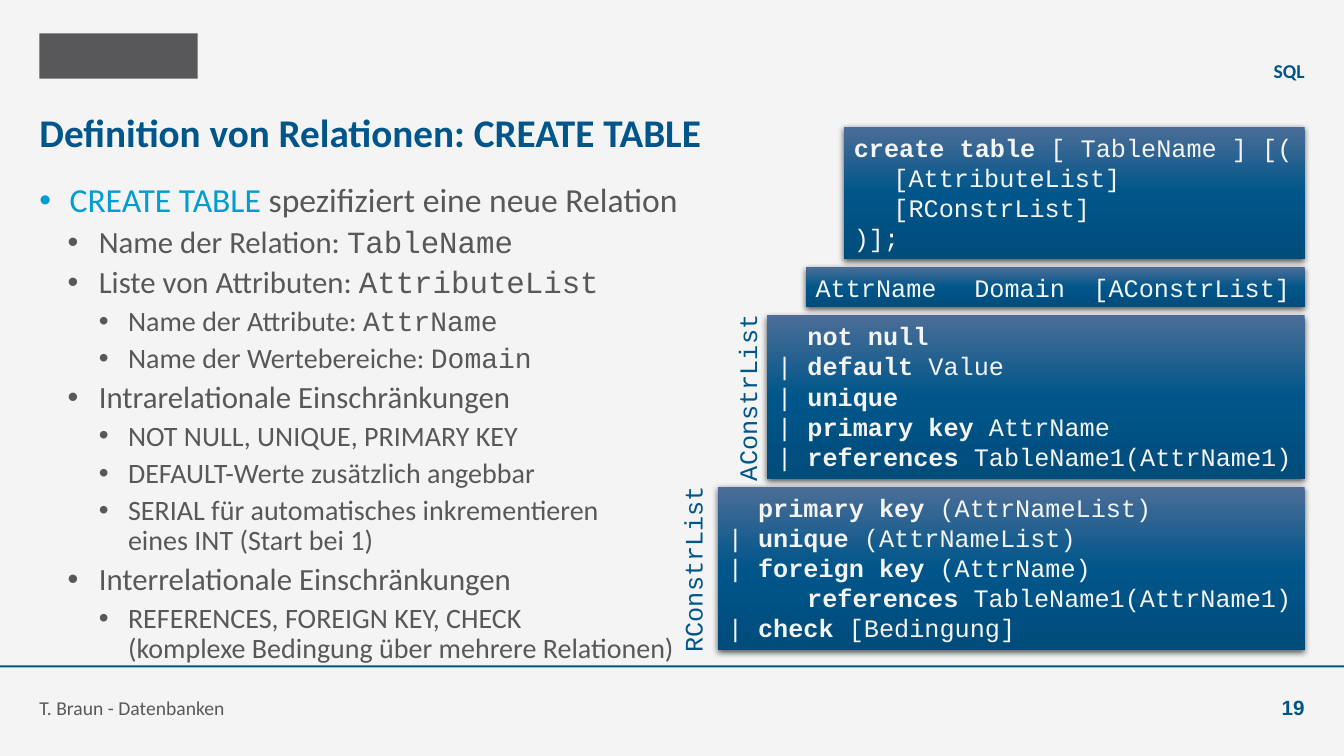
from lxml.etree import SubElement
from pptx import Presentation
from pptx.dml.color import RGBColor
from pptx.enum.shapes import MSO_SHAPE as Preset
from pptx.enum.text import MSO_ANCHOR as Anchor, MSO_AUTO_SIZE as AutoSize, PP_ALIGN as Align
from pptx.oxml.ns import qn
from pptx.util import Inches, Pt

COLORS = {
    "background": "F4F4F4",
    "blue": "00568A",
    "gray": "58585A",
    "accent": "009DD1",
    "light_blue": "4B6D97",
    "dark_blue": "004C7B",
    "black": "000000",
}
CODE = "Courier New"
LEFT, RIGHT = 0.39, 12.94
BOX_GAP = 0.08
TAB_STEP, TAB_COUNT = 0.3937, 8

LEVELS = [
    {"size": 24, "left": 0.3, "hanging": 0.3},
    {"size": 22, "left": 0.59, "hanging": 0.31},
    {"size": 20, "left": 0.88, "hanging": 0.29},
]

OUTLINE = [
    (0, [("CREATE TABLE ", "Calibri", "accent"), ("spezifiziert eine neue Relation",)]),
    (1, [("Name der Relation: ",), ("TableName", CODE)]),
    (1, [("Liste von Attributen: ",), ("AttributeList", CODE)]),
    (2, [("Name der Attribute: ",), ("AttrName", CODE)]),
    (2, [("Name der Wertebereiche: ",), ("Domain", CODE)]),
    (1, [("Intrarelationale Einschränkungen",)]),
    (2, [("NOT NULL, UNIQUE, PRIMARY KEY",)]),
    (2, [("DEFAULT-Werte zusätzlich angebbar",)]),
    (2, [("SERIAL für automatisches inkrementieren ",), ("eines INT (Start bei 1)",)]),
    (1, [("Interrelationale Einschränkungen",)]),
    (2, [("REFERENCES, FOREIGN KEY, CHECK ",), ("(komplexe Bedingung über mehrere Relationen)",)]),
]
BREAK_BEFORE = {"eines INT (Start bei 1)", "(komplexe Bedingung über mehrere Relationen)"}

# Each code line holds plain text, keyword, plain text.
CODE_BOXES = [
    {"width": 4.57, "height": 1.31, "lines": [
        ("", "create table", " [ TableName ] [("),
        ("\t[AttributeList]", "", ""),
        ("\t[RConstrList]", "", ""),
        (")];", "", ""),
    ]},
    {"width": 4.95, "height": 0.4, "lines": [
        ("AttrName\tDomain\t[AConstrList]", "", ""),
    ]},
    {"width": 5.33, "height": 1.62, "label": "AConstrList", "label_center": 7.41, "lines": [
        ("", "  not null", ""),
        ("| ", "default", " Value"),
        ("| ", "unique", ""),
        ("| ", "primary key", " AttrName"),
        ("| ", "references", " TableName1(AttrName1)"),
    ]},
    {"width": 5.82, "height": 1.62, "label": "RConstrList", "label_center": 6.87, "lines": [
        ("", "  primary key", " (AttrNameList)"),
        ("| ", "unique", " (AttrNameList)"),
        ("|", " foreign key", " (AttrName)"),
        ("", "\t\treferences", " TableName1(AttrName1)"),
        ("| ", "check", " [Bedingung]"),
    ]},
]


def rgb(color):
    return RGBColor.from_string(COLORS[color])


def place(shape, left, top, width, height):
    shape.left, shape.top = Inches(left), Inches(top)
    shape.width, shape.height = Inches(width), Inches(height)


def add_run(paragraph, text, size, color, font="Calibri", bold=False):
    run = paragraph.add_run()
    run.text = text
    run.font.name, run.font.size, run.font.bold = font, Pt(size), bold
    run.font.color.rgb = rgb(color)


def clear_margins(frame):
    frame.margin_left = frame.margin_right = frame.margin_top = frame.margin_bottom = 0
    frame.auto_size = AutoSize.NONE
    frame.word_wrap = True


def add_bar(slide, left, top, width, height, color):
    shape = slide.shapes.add_shape(
        Preset.RECTANGLE, Inches(left), Inches(top), Inches(width), Inches(height))
    shape.shadow.inherit = False
    shape.fill.solid()
    shape.fill.fore_color.rgb = rgb(color)
    shape.line.fill.background()
    return shape


def fill_title(slide, text):
    title = slide.shapes.title
    place(title, LEFT, 0.99, 12.55, 0.63)
    frame = title.text_frame
    clear_margins(frame)
    frame.vertical_anchor = Anchor.MIDDLE
    frame.paragraphs[0].alignment = Align.LEFT
    add_run(frame.paragraphs[0], text, 28, "blue", bold=True)


def set_bullet(paragraph, left, hanging):
    properties = paragraph._p.get_or_add_pPr()
    properties.set("marL", str(Inches(left)))
    properties.set("indent", str(-Inches(hanging)))
    SubElement(properties, qn("a:buFont"), typeface="Arial")
    SubElement(properties, qn("a:buChar"), char="•")


def fill_outline(slide):
    body = slide.placeholders[1]
    place(body, LEFT, 1.82, 12.55, 4.64)
    frame = body.text_frame
    clear_margins(frame)
    frame.vertical_anchor = Anchor.TOP
    for index, (level, runs) in enumerate(OUTLINE):
        paragraph = frame.add_paragraph() if index else frame.paragraphs[0]
        paragraph.level = level
        paragraph.line_spacing = 0.9
        paragraph.space_before = Pt(5)
        style = LEVELS[level]
        set_bullet(paragraph, style["left"], style["hanging"])
        for text, *look in runs:
            if text in BREAK_BEFORE:
                paragraph.add_line_break()
            font, color = (look + ["Calibri", "gray"][len(look):])
            add_run(paragraph, text, style["size"], color, font)


def add_caption(slide, left, width, top, text, size, color, align=Align.LEFT, font="Calibri", bold=False):
    box = slide.shapes.add_textbox(Inches(left), Inches(top), Inches(width), Inches(0.39))
    frame = box.text_frame
    clear_margins(frame)
    frame.vertical_anchor = Anchor.BOTTOM
    frame.paragraphs[0].alignment = align
    add_run(frame.paragraphs[0], text, size, color, font, bold)


def add_gradient_and_shadow(shape):
    shape.fill.gradient()
    shape.fill.gradient_angle = 270
    properties = shape._element.spPr
    stops = properties.find(".//" + qn("a:gsLst"))
    stops.clear()
    for position, color in ((0, "light_blue"), (50, "blue"), (100, "dark_blue")):
        stop = SubElement(stops, qn("a:gs"), pos=str(position * 1000))
        SubElement(stop, qn("a:srgbClr"), val=COLORS[color])
    shadow = SubElement(
        properties.find(qn("a:effectLst")), qn("a:outerShdw"), blurRad=str(Pt(4.5)),
        dist=str(Pt(1.5)), dir="5400000", rotWithShape="0")
    shade = SubElement(shadow, qn("a:srgbClr"), val=COLORS["black"])
    SubElement(shade, qn("a:alpha"), val="63000")


def set_tabs(paragraph):
    tabs = SubElement(paragraph._p.get_or_add_pPr(), qn("a:tabLst"))
    for number in range(1, TAB_COUNT + 1):
        SubElement(tabs, qn("a:tab"), pos=str(Inches(number * TAB_STEP)), algn="l")


def add_code_box(slide, top, width, height, lines):
    shape = add_bar(slide, RIGHT - width, top, width, height, "blue")
    add_gradient_and_shadow(shape)
    frame = shape.text_frame
    frame.word_wrap = False
    frame.auto_size = AutoSize.SHAPE_TO_FIT_TEXT
    frame.vertical_anchor = Anchor.TOP
    for index, parts in enumerate(lines):
        paragraph = frame.add_paragraph() if index else frame.paragraphs[0]
        paragraph.alignment = Align.LEFT
        set_tabs(paragraph)
        for text, bold in zip(parts, (False, True, False)):
            if text:
                add_run(paragraph, text, 18, "background", CODE, bold)


def add_side_label(slide, text, center_x, center_y):
    width, height = 1.86, 0.4
    box = slide.shapes.add_textbox(
        Inches(center_x - width / 2), Inches(center_y - height / 2), Inches(width), Inches(height))
    box.rotation = 270
    box.text_frame.word_wrap = False
    box.text_frame.auto_size = AutoSize.SHAPE_TO_FIT_TEXT
    add_run(box.text_frame.paragraphs[0], text, 18, "blue", CODE)


def main():
    presentation = Presentation()
    presentation.slide_width, presentation.slide_height = Inches(13.33), Inches(7.5)
    slide = presentation.slides.add_slide(presentation.slide_layouts[1])
    slide.background.fill.solid()
    slide.background.fill.fore_color.rgb = rgb("background")

    add_bar(slide, LEFT, 0.33, 1.57, 0.45, "gray")
    add_bar(slide, 0, 6.6, 13.33, 0.02, "blue")
    fill_title(slide, "Definition von Relationen: CREATE TABLE")
    fill_outline(slide)

    top = 1.26
    for box in CODE_BOXES:
        add_code_box(slide, top, box["width"], box["height"], box["lines"])
        if "label" in box:
            add_side_label(slide, box["label"], box["label_center"], top + box["height"] / 2)
        top += box["height"] + BOX_GAP

    add_caption(slide, 3.93, 9.01, 0.43, "SQL", 14, "blue", Align.RIGHT, bold=True)
    add_caption(slide, LEFT, 9.2, 6.75, "T. Braun - Datenbanken", 14, "gray")
    add_caption(slide, 12.15, 0.79, 6.75, "19", 14.7, "blue", Align.RIGHT, "Arial", True)
    presentation.save("out.pptx")


if __name__ == "__main__":
    main()
